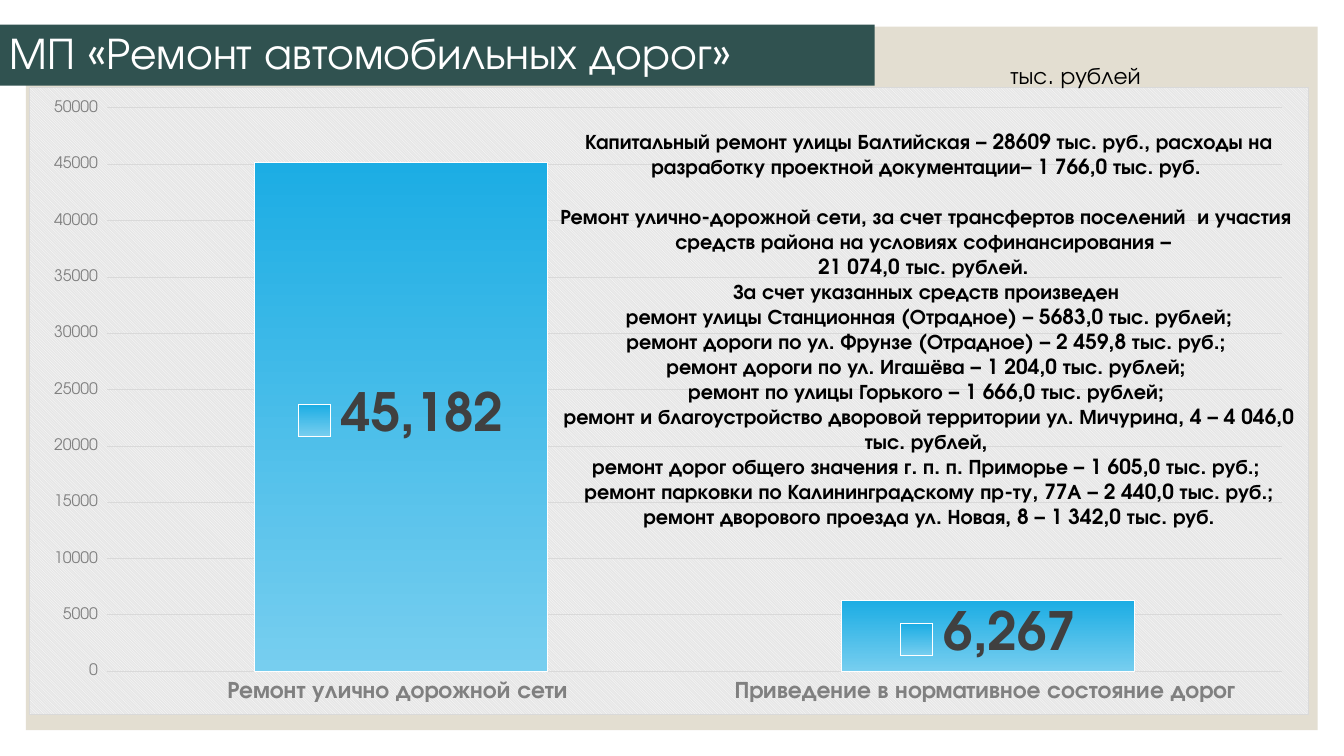
from dataclasses import dataclass

from lxml.etree import SubElement
from pptx import Presentation
from pptx.chart.chart import Chart
from pptx.chart.data import CategoryChartData
from pptx.dml.color import RGBColor
from pptx.enum.chart import XL_CHART_TYPE, XL_LABEL_POSITION, XL_TICK_MARK
from pptx.enum.shapes import MSO_SHAPE
from pptx.enum.text import MSO_ANCHOR, PP_ALIGN
from pptx.oxml import parse_xml
from pptx.oxml.ns import nsdecls, qn
from pptx.slide import Slide
from pptx.text.text import Font, TextFrame
from pptx.util import Cm, Pt


@dataclass(frozen=True)
class Theme:
    font: str = "TeX Gyre Adventor"
    panel: str = "E3DED1"
    banner: str = "305250"
    white: str = "FFFFFF"
    black: str = "000000"
    axis: str = "808080"
    label: str = "404040"
    grid: str = "D9D9D9"
    hatch: str = "E6E6E6"
    bar_top: str = "1CADE4"
    bar_bottom: str = "77CEEF"
    title_size: float = 33.9
    body_size: float = 15.8
    unit_size: float = 18
    category_size: float = 18
    value_size: float = 12
    label_size: float = 40
    hairline: float = 0.75


@dataclass(frozen=True)
class Area:
    left: float
    top: float
    width: float
    height: float

    def lengths(self) -> tuple[Cm, Cm, Cm, Cm]:
        return Cm(self.left), Cm(self.top), Cm(self.width), Cm(self.height)


@dataclass(frozen=True)
class Note:
    area: Area
    lines: tuple[str, ...]
    size: float
    bold: bool
    align: PP_ALIGN
    gap_line: int | None = None


THEME = Theme()
PANEL = Area(0.69, 0.71, 34.52, 18.8)
BANNER = Area(0, 0.66, 23.37, 1.63)
CHART = Area(0.77, 2.32, 34.21, 16.79)
PLOT_SHARE = {"x": 0.061, "y": 0.033, "w": 0.918, "h": 0.898}
SPENDING = {
    "Ремонт улично дорожной сети ": 45182,
    "Приведение в нормативное состояние дорог ": 6267,
}
NOTES = (
    Note(
        Area(14.35, 3.31, 20.8, 11.07),
        (
            " Капитальный ремонт улицы Балтийская – 28609 тыс. руб., расходы на "
            "разработку проектной документации– 1 766,0 тыс. руб.",
            "Ремонт улично-дорожной сети, за счет трансфертов поселений  и участия "
            "средств района на условиях софинансирования – ",
            "21 074,0 тыс. рублей. ",
            "За счет указанных средств произведен",
            " ремонт улицы Станционная (Отрадное) – 5683,0 тыс. рублей;",
            "ремонт дороги по ул. Фрунзе (Отрадное) – 2 459,8 тыс. руб.;",
            " ремонт дороги по ул. Игашёва – 1 204,0 тыс. рублей; ",
            "ремонт по улицы Горького – 1 666,0 тыс. рублей;",
            " ремонт и благоустройство дворовой территории ул. Мичурина, 4 – 4 046,0 "
            "тыс. рублей,",
            " ремонт дорог общего значения г. п. п. Приморье – 1 605,0 тыс. руб.; ",
            " ремонт парковки по Калининградскому пр-ту, 77А – 2 440,0 тыс. руб.;",
            " ремонт дворового проезда ул. Новая, 8 – 1 342,0 тыс. руб.",
        ),
        THEME.body_size, True, PP_ALIGN.CENTER, gap_line=1,
    ),
    Note(Area(26.75, 1.5, 6.81, 1.02), ("тыс. рублей",),
         THEME.unit_size, False, PP_ALIGN.LEFT),
)


def color(value: str) -> RGBColor:
    return RGBColor.from_string(value)


def apply(target: object, values: dict[str, object]) -> None:
    for name, value in values.items():
        setattr(target, name, value)


def style_font(font: Font, size: float, tone: str, bold: bool = False) -> None:
    apply(font, {"name": THEME.font, "size": Pt(size), "bold": bold})
    font.color.rgb = color(tone)


def add_panel(page: Slide) -> None:
    panel = page.shapes.add_shape(MSO_SHAPE.RECTANGLE, *PANEL.lengths())
    panel.shadow.inherit = False
    panel.fill.solid()
    panel.fill.fore_color.rgb = color(THEME.panel)
    panel.line.fill.background()
    page.shapes.title.element.addprevious(panel.element)


def format_title(page: Slide) -> None:
    title = page.shapes.title
    apply(title, dict(zip(("left", "top", "width", "height"), BANNER.lengths())))
    title.fill.solid()
    title.fill.fore_color.rgb = color(THEME.banner)
    frame: TextFrame = title.text_frame
    frame.text = "МП «Ремонт автомобильных дорог»"
    apply(frame, {"word_wrap": True, "vertical_anchor": MSO_ANCHOR.MIDDLE})
    para = frame.paragraphs[0]
    apply(para, {"alignment": PP_ALIGN.LEFT, "line_spacing": 0.9})
    style_font(para.runs[0].font, THEME.title_size, THEME.white)


def add_note(page: Slide, note: Note) -> None:
    frame = page.shapes.add_textbox(*note.area.lengths()).text_frame
    frame.word_wrap = True
    frame.text = "\n".join(note.lines)
    for index, para in enumerate(frame.paragraphs):
        para.alignment = note.align
        if index == note.gap_line:
            para.space_before = Pt(note.size * 1.2)
        style_font(para.runs[0].font, note.size, THEME.black, note.bold)


def hatch_background(chart: Chart) -> None:
    """Give the chart area a diagonal pattern and a thin border."""
    width = Pt(THEME.hairline)
    chart.element.find(qn("c:chart")).addnext(parse_xml(
        f'<c:spPr {nsdecls("c", "a")}><a:pattFill prst="dkDnDiag">'
        f'<a:fgClr><a:srgbClr val="{THEME.white}"/></a:fgClr>'
        f'<a:bgClr><a:srgbClr val="{THEME.hatch}"/></a:bgClr></a:pattFill>'
        f'<a:ln w="{width}"><a:solidFill><a:srgbClr val="{THEME.grid}"/>'
        f'</a:solidFill></a:ln></c:spPr>'))


def place_plot(chart: Chart) -> None:
    """Fix the inner plot area as shares of the chart area."""
    plot_area = chart.element.find(qn("c:chart")).find(qn("c:plotArea"))
    for layout in plot_area.findall(qn("c:layout")):
        plot_area.remove(layout)
    layout = parse_xml(f'<c:layout {nsdecls("c")}/>')
    manual = SubElement(layout, qn("c:manualLayout"))
    settings = {"layoutTarget": "inner", "xMode": "edge", "yMode": "edge", **PLOT_SHARE}
    for name, value in settings.items():
        SubElement(manual, qn(f"c:{name}")).set("val", str(value))
    plot_area.insert(0, layout)


def format_axes(chart: Chart) -> None:
    values = chart.value_axis
    apply(values, {"minimum_scale": 0, "maximum_scale": 50000, "major_unit": 5000})
    grid = values.major_gridlines.format.line
    grid.width = Pt(THEME.hairline)
    grid.color.rgb = color(THEME.grid)
    axes = ((chart.category_axis, THEME.category_size, True),
            (values, THEME.value_size, False))
    for axis, size, bold in axes:
        axis.major_tick_mark = XL_TICK_MARK.OUTSIDE
        axis.format.line.fill.background()
        style_font(axis.tick_labels.font, size, THEME.axis, bold)


def format_bars(chart: Chart) -> None:
    plot = chart.plots[0]
    apply(plot, {"gap_width": 100, "vary_by_categories": False, "has_data_labels": True})
    apply(plot.data_labels, {
        "show_value": True, "show_legend_key": True, "number_format": "#,##0",
        "number_format_is_linked": False, "position": XL_LABEL_POSITION.CENTER,
    })
    style_font(plot.data_labels.font, THEME.label_size, THEME.label, True)
    bars = plot.series[0].format
    bars.fill.gradient()
    bars.fill.gradient_angle = 270
    for stop, tone in zip(bars.fill.gradient_stops, (THEME.bar_top, THEME.bar_bottom)):
        stop.color.rgb = color(tone)
    bars.line.width = Pt(THEME.hairline)
    bars.line.color.rgb = color(THEME.white)


def add_spending_chart(page: Slide) -> None:
    data = CategoryChartData()
    data.categories = list(SPENDING)
    data.add_series("Series 1", list(SPENDING.values()))
    chart = page.shapes.add_chart(
        XL_CHART_TYPE.COLUMN_CLUSTERED, *CHART.lengths(), data).chart
    apply(chart, {"has_legend": False, "has_title": False})
    style_font(chart.font, 10, THEME.black)
    hatch_background(chart)
    place_plot(chart)
    format_axes(chart)
    format_bars(chart)


def main() -> None:
    deck = Presentation()
    apply(deck, {"slide_width": Cm(35.91), "slide_height": Cm(20.2)})
    page = deck.slides.add_slide(deck.slide_layouts.get_by_name("Title Only"))
    add_panel(page)
    format_title(page)
    add_spending_chart(page)
    for note in NOTES:
        add_note(page, note)
    deck.save("out.pptx")


if __name__ == "__main__":
    main()
